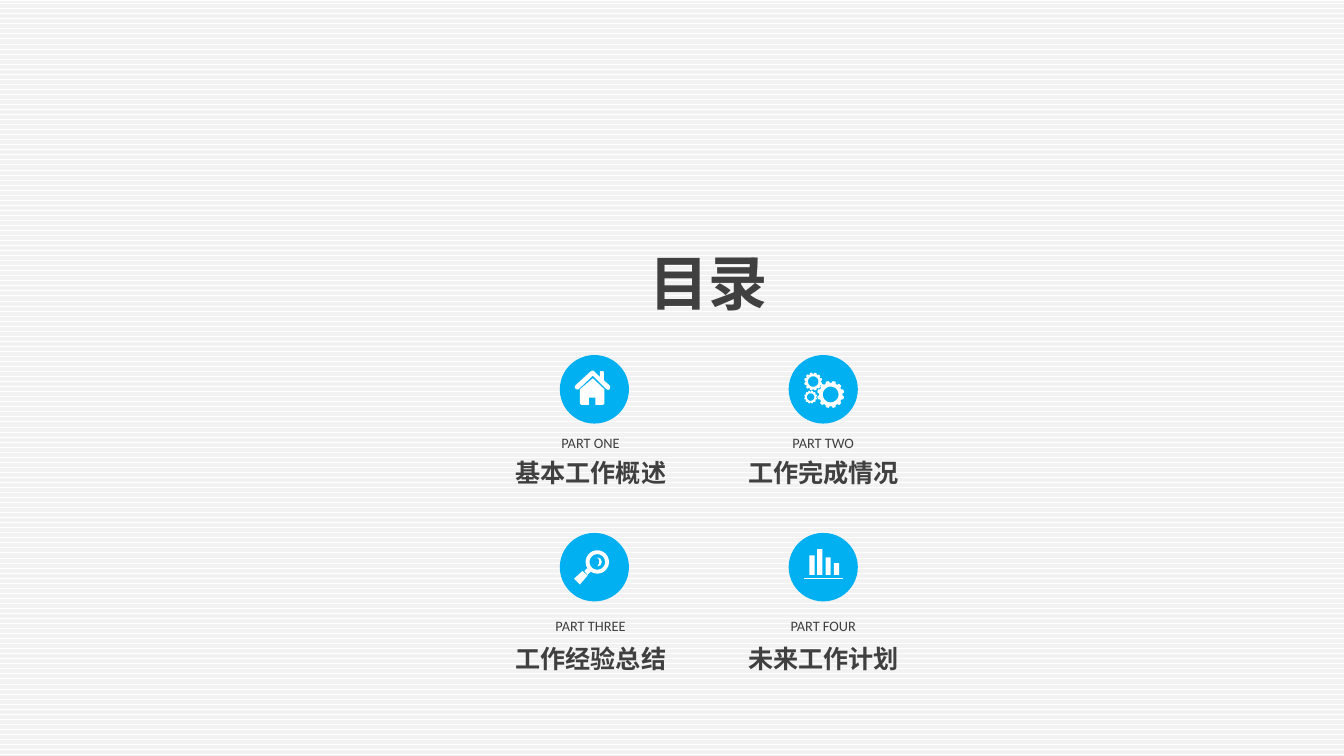
from math import cos, pi, sin

from pptx import Presentation
from pptx.dml.color import RGBColor
from pptx.enum.dml import MSO_PATTERN as Pat
from pptx.enum.shapes import MSO_SHAPE as Geo
from pptx.enum.text import MSO_AUTO_SIZE as Fit, PP_ALIGN as Al
from pptx.util import Inches, Pt

HEX = {"blue": "00B0F0", "white": "FFFFFF", "stripe": "F2F2F2", "text": "404040"}


def color(name):
    return RGBColor.from_string(HEX[name])


def box(x, y, w, h):
    return [(x, y), (x + w, y), (x + w, y + h), (x, y + h)]


def ring(x, y, r, n=48):
    turns = [2 * pi * i / n for i in range(n)]
    return [(x + r * cos(a), y + r * sin(a)) for a in turns]


def gear(x, y, r, teeth=12):
    """Toothed rim with a round hole."""
    step = 2 * pi / teeth
    rim = []
    for i in range(teeth):
        mid = (i + 0.5) * step
        for turn, size in ((-0.36, 0.86), (-0.2, 1), (0.2, 1), (0.36, 0.86)):
            a = mid + turn * step
            rim.append((x + r * size * cos(a), y + r * size * sin(a)))
    return [rim, ring(x, y, 0.58 * r)]


class Page:
    def __init__(self, deck):
        self.shapes = deck.slides.add_slide(deck.slide_layouts[6]).shapes

    def shape(self, kind, x, y, w, h):
        item = self.shapes.add_shape(kind, Inches(x), Inches(y), Inches(w), Inches(h))
        item.shadow.inherit = False
        item.line.fill.background()
        return item

    def stripes(self, x, y, w, h):
        fill = self.shape(Geo.RECTANGLE, x, y, w, h).fill
        fill.patterned()
        fill.pattern = Pat.NARROW_HORIZONTAL
        fill.fore_color.rgb = color("stripe")
        fill.back_color.rgb = color("white")

    def disc(self, x, y):
        fill = self.shape(Geo.OVAL, x, y, 1.07, 1.06).fill
        fill.solid()
        fill.fore_color.rgb = color("blue")

    def icon(self, loops):
        """One white outline made of several closed loops."""
        loops = [[(Inches(x), Inches(y)) for x, y in loop] for loop in loops]
        pen = self.shapes.build_freeform(*loops[0][0], scale=1.0)
        pen.add_line_segments(loops[0][1:])
        for loop in loops[1:]:
            pen.move_to(*loop[0])
            pen.add_line_segments(loop[1:])
        item = pen.convert_to_shape()
        item.shadow.inherit = False
        item.line.fill.background()
        item.fill.solid()
        item.fill.fore_color.rgb = color("white")

    def text(self, words, x, y, w, h, size, lead, face="Arial", bold=True,
             align=Al.CENTER, wrap=True):
        item = self.shapes.add_textbox(Inches(x), Inches(y), Inches(w), Inches(h))
        frame = item.text_frame
        frame.word_wrap = wrap
        frame.auto_size = Fit.SHAPE_TO_FIT_TEXT
        para = frame.paragraphs[0]
        para.text = words
        para.alignment = align
        para.line_spacing = Pt(lead)
        font = para.font
        font.name, font.size, font.bold = face, Pt(size), bold
        font.color.rgb = color("text")


# Icons, each a list of outlines
HOUSE = [
    [[(8.97, 6.02), (8.97, 6.24), (8.99, 6.26), (9.11, 6.26), (9.11, 6.15),
      (9.21, 6.15), (9.21, 6.26), (9.33, 6.26), (9.35, 6.24), (9.35, 6.02),
      (9.17, 5.85)]],
    [[(9.43, 5.96), (9.34, 5.88), (9.34, 5.75), (9.33, 5.74), (9.29, 5.74),
      (9.28, 5.75), (9.28, 5.83), (9.19, 5.74), (9.17, 5.73), (9.14, 5.74),
      (8.9, 5.96), (8.89, 5.99), (8.91, 6.02), (8.95, 6.02), (9.17, 5.81),
      (9.38, 6.02), (9.41, 6.03), (9.43, 6.02), (9.44, 5.99)]],
]
GEARS = [gear(12.85, 6.1, 0.21), gear(12.58, 5.9, 0.14), gear(12.54, 6.14, 0.1)]
LENS = [[
    ring(9.24, 8.69, 0.18), ring(9.24, 8.69, 0.12),
    [(9.24, 8.62), (9.27, 8.66), (9.27, 8.71), (9.24, 8.76), (9.29, 8.74),
     (9.31, 8.69), (9.29, 8.64)],
    [(9.08, 8.79), (9.04, 8.83), (9.09, 8.89), (9.14, 8.84)],
    [(9.01, 8.83), (8.88, 8.95), (8.97, 9.04), (9.09, 8.9)],
]]
BARS = [[box(12.44, 8.94, 0.6, 0.01)] + [
    box(x, y, 0.08, 8.89 - y)
    for x, y in ((12.52, 8.59), (12.64, 8.49), (12.77, 8.62), (12.9, 8.71))
]]

# Disc left and top, label left, label top, heading top
LEFT, RIGHT = (8.66, 8), (12.2, 11.6)
UPPER, LOWER = (5.49, 6.67, 6.95), (8.24, 9.49, 9.83)
PARTS = [
    (LEFT, UPPER, "PART ONE", "基本工作概述", HOUSE),
    (RIGHT, UPPER, "PART TWO", "工作完成情况", GEARS),
    (LEFT, LOWER, "PART THREE", "工作经验总结", LENS),
    (RIGHT, LOWER, "PART FOUR", "未来工作计划", BARS),
]


def main():
    deck = Presentation()
    deck.slide_width, deck.slide_height = Inches(20.79), Inches(11.69)
    page = Page(deck)

    # Backdrop and title
    page.stripes(-0.04, 0, 20.83, 11.86)
    page.text("目录", 9.95, 3.76, 2.26, 1.21, 66, 79.2, align=Al.JUSTIFY)

    # Four parts
    for (disc, left), (top, label, head), part, name, icon in PARTS:
        page.disc(disc, top)
        for loops in icon:
            page.icon(loops)
        page.text(part, left, label, 2.27, 0.37, 16, 19.2, "Calibri", False)
        page.text(name, left - 0.14, head, 2.56, 0.63, 28, 38.4, wrap=False)

    deck.save("out.pptx")


if __name__ == "__main__":
    main()
